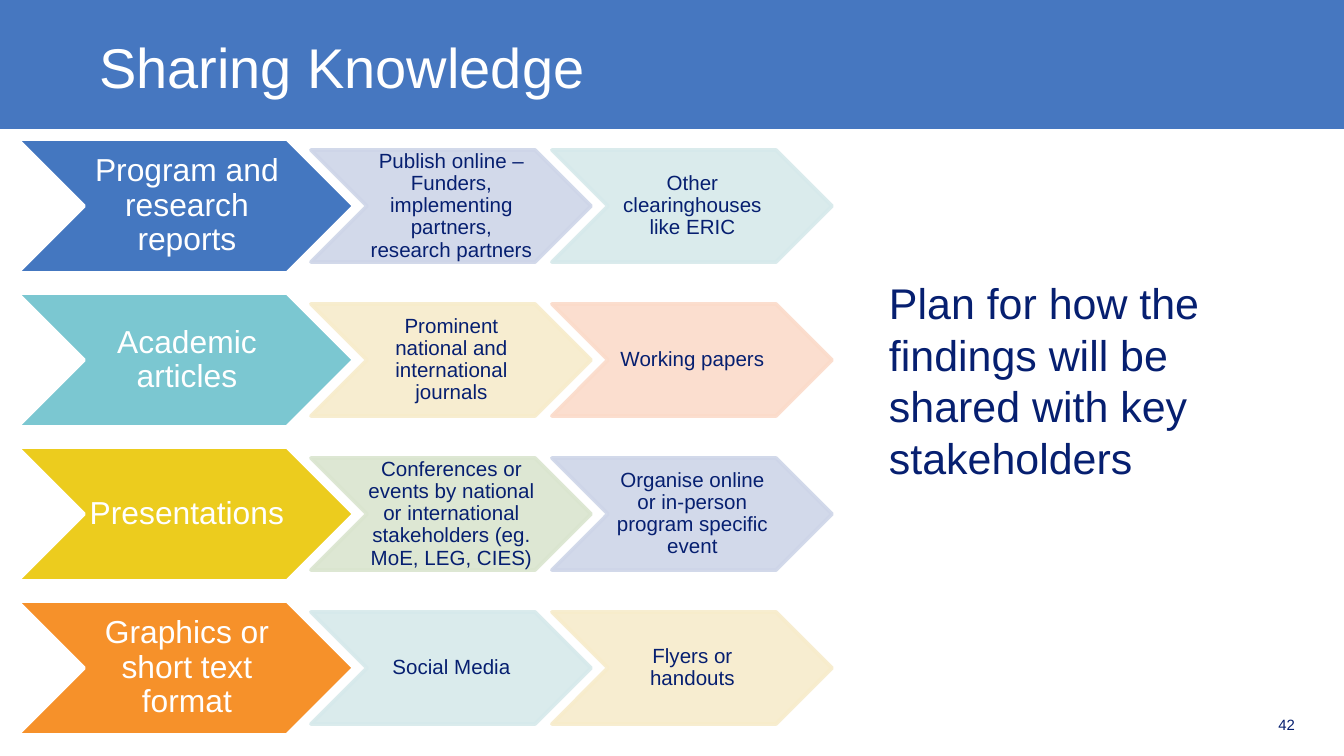
from lxml import etree
from pptx import Presentation
from pptx import util as u
from pptx.dml.color import RGBColor
from pptx.enum import shapes, text
from pptx.oxml.ns import qn

PX = u.Inches(10) / 1344  # EMU in one px
WHITE, NAVY, BLUE = "FFFFFF", "061F70", "4677C0"
LILAC, MINT, CREAM = "CED5E8", "D6E9EB", "F7ECCB"

TITLE = "Sharing Knowledge"
MESSAGE = "Plan for how the findings will be shared with key stakeholders"
PAGE = "42"
CHANNELS = [  # one row each: (wording, fill) of the output and its two outlets
    [("Program and research reports", "4477C0"),
     ("Publish online – Funders, implementing partners, research partners", LILAC),
     ("Other clearinghouses like ERIC", MINT)],
    [("Academic articles", "7BC7D1"),
     ("Prominent national and international journals", CREAM),
     ("Working papers", "FBDBCA")],
    [("Presentations", "ECCC1E"),
     ("Conferences or events by national or international stakeholders "
      "(eg. MoE, LEG, CIES)", "DAE5CF"),
     ("Organise online or in-person program specific event", LILAC)],
    [("Graphics or short text format", "F6912A"),
     ("Social Media", MINT),
     ("Flyers or handouts", CREAM)],
]

FIRST_CENTRE, ROW_PITCH = 206, 154
OUTPUT = dict(width=337, height=134, size=17, color=WHITE, insets=(3, 1, 0, 1))
OUTLET = dict(width=280, height=112, size=11, color=NAVY, insets=(1, 1, 0, 1))
COLUMNS = [(17, OUTPUT), (311, OUTLET), (552, OUTLET)]
BOX_INSETS = (10, 5, 10, 5)


def emu(*lengths):
    return [u.Emu(round(length * PX)) for length in lengths]


def rgb(value):
    return RGBColor.from_string(value)


def write(shape, wording, size, color, insets=BOX_INSETS,
          align=text.PP_ALIGN.LEFT, anchor=text.MSO_ANCHOR.TOP, spacing=1.0):
    frame = shape.text_frame
    frame.text = wording
    left, top, right, bottom = emu(*insets)
    settings = dict(word_wrap=True, auto_size=text.MSO_AUTO_SIZE.NONE,
                    vertical_anchor=anchor, margin_left=left, margin_top=top,
                    margin_right=right, margin_bottom=bottom)
    for name, value in settings.items():
        setattr(frame, name, value)
    paragraph = frame.paragraphs[0]
    paragraph.alignment, paragraph.line_spacing = align, spacing
    font = paragraph.runs[0].font
    font.name, font.size = "Arial", u.Pt(size)
    font.color.rgb = rgb(color)


def add_filled(kind, box, fill):
    shape = slide.shapes.add_shape(kind, *emu(*box))
    shape.shadow.inherit = False
    shape.fill.solid()
    shape.fill.fore_color.rgb = rgb(fill)
    shape.line.fill.background()
    return shape


def add_chevron(left, centre, style, wording, fill):
    width, height = style["width"], style["height"]
    box = (left, centre - height / 2, width, height)
    chevron = add_filled(shapes.MSO_SHAPE.CHEVRON, box, fill)
    chevron.adjustments[0] = 0.5
    chevron.line.color.rgb = rgb(WHITE if style is OUTPUT else fill)
    chevron.line.width = u.Pt(2)
    if style is OUTLET:
        for color in chevron.fill._xPr.iter(qn("a:srgbClr")):
            etree.SubElement(color, qn("a:alpha"), val="90000")
    write(chevron, wording, style["size"], style["color"], style["insets"],
          text.PP_ALIGN.CENTER, text.MSO_ANCHOR.MIDDLE, 0.9)


deck = Presentation()
deck.slide_width, deck.slide_height = emu(1344, 756)
slide = deck.slides.add_slide(deck.slide_layouts[5])

banner = add_filled(shapes.MSO_SHAPE.RECTANGLE, (0, -3, 1344, 132), BLUE)
slide.shapes._spTree.insert(2, banner._element)  # behind the title

title = slide.shapes.title
title.left, title.top, title.width, title.height = emu(89, 12, 1165, 108)
write(title, TITLE, 30, WHITE, anchor=text.MSO_ANCHOR.MIDDLE)

page = slide.shapes.add_textbox(*emu(1188, 695, 117, 40))
write(page, PAGE, 8, NAVY, (10, 5, 10, 1),
      text.PP_ALIGN.RIGHT, text.MSO_ANCHOR.BOTTOM)

for row, channel in enumerate(CHANNELS):
    for (left, style), (wording, fill) in zip(COLUMNS, channel):
        add_chevron(left, FIRST_CENTRE + row * ROW_PITCH, style, wording, fill)

message = slide.shapes.add_textbox(*emu(879, 272, 426, 218))
write(message, MESSAGE, 23, NAVY)

deck.save("out.pptx")
